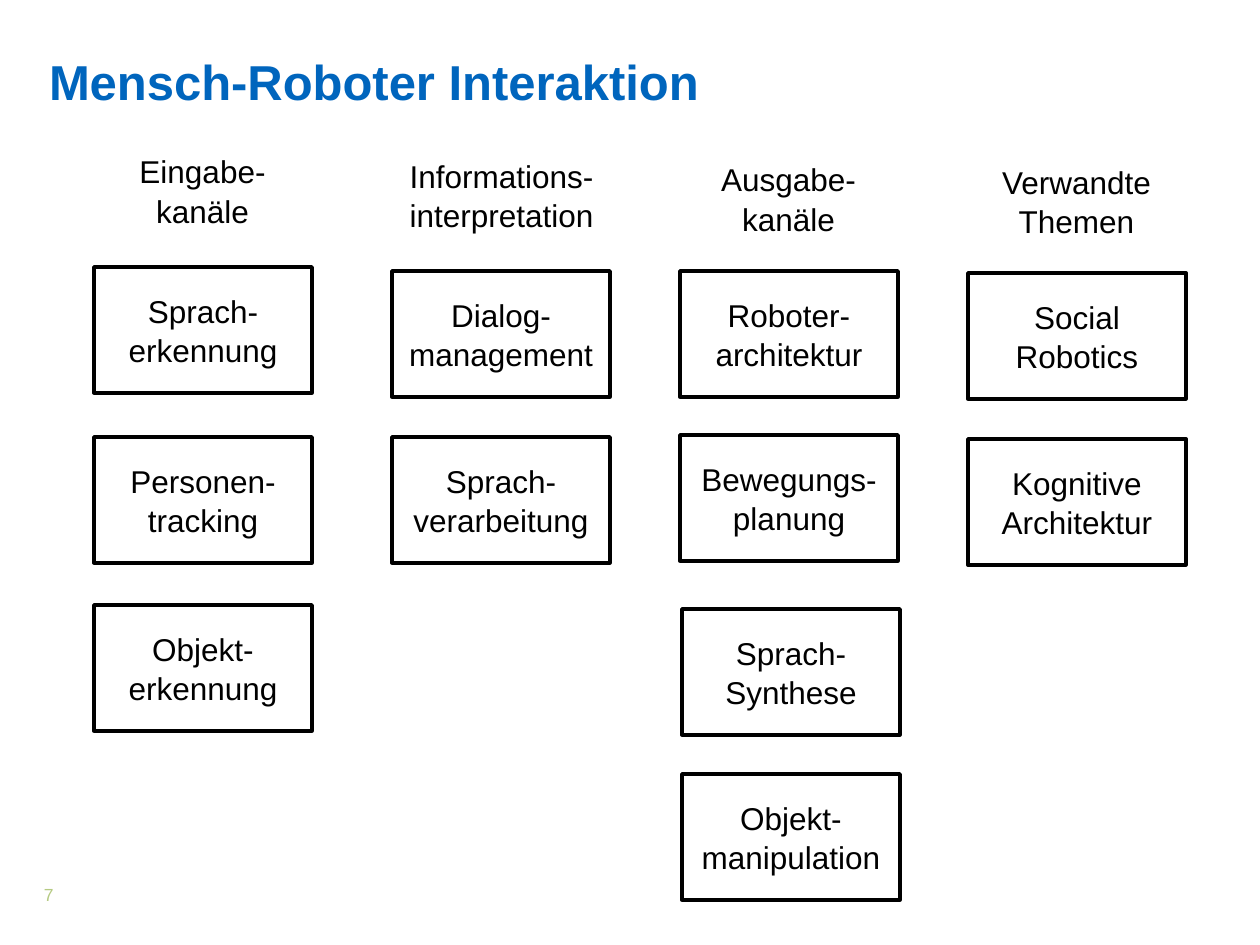
from dataclasses import dataclass

from pptx import Presentation
from pptx import util as u
from pptx.dml.color import RGBColor
from pptx.enum import shapes, text

SCALE = 914400 // 126


@dataclass(frozen=True)
class Theme:
    font: str = "Arial"
    blue: str = "0065BD"
    green: str = "B5CA82"
    black: str = "000000"
    white: str = "FFFFFF"
    title: int = 28
    body: int = 18
    small: int = 10
    line: int = 2


THEME = Theme()
PANEL_W = 297
BOX_W, BOX_H = 218, 126

# Panel left, top and height; heading; boxes as (left, top, words)
TOPICS = [
    (54, 145, 636, "Eingabe-\nkanäle", [
        (94, 267, "Sprach-\nerkennung"),
        (94, 437, "Personen-\ntracking"),
        (94, 605, "Objekt-\nerkennung")]),
    (353, 149, 636, "Informations-\ninterpretation", [
        (392, 271, "Dialog-\nmanagement"),
        (392, 437, "Sprach-verarbeitung")]),
    (928, 155, 636, "Verwandte\nThemen", [
        (968, 273, "Social\nRobotics"),
        (968, 439, "Kognitive\nArchitektur")]),
    (640, 153, 780, "Ausgabe-\nkanäle", [
        (680, 271, "Roboter-\narchitektur"),
        (680, 435, "Bewegungs-\nplanung"),
        (682, 609, "Sprach-\nSynthese"),
        (682, 774, "Objekt-\nmanipulation")]),
]


def px(*sizes):
    return [u.Emu(size * SCALE) for size in sizes]


def rgb(code):
    return RGBColor.from_string(code)


def write(shape, words, size=THEME.body, color=THEME.black, bold=False,
          align=text.PP_ALIGN.CENTER, anchor=text.MSO_ANCHOR.MIDDLE,
          inset=(13, 6), spacing=1.04):
    frame = shape.text_frame
    frame.word_wrap = True
    frame.auto_size = text.MSO_AUTO_SIZE.NONE
    frame.vertical_anchor = anchor
    frame.margin_left, frame.margin_top = px(*inset)
    frame.margin_right, frame.margin_bottom = px(*inset)
    frame.text = words
    for para in frame.paragraphs:
        para.alignment = align
        para.line_spacing = spacing
        font = para.font
        font.name, font.size, font.bold = THEME.font, u.Pt(size), bold
        font.color.rgb = rgb(color)


def add_rect(group, place, words, framed=True, **style):
    rect = group.shapes.add_shape(shapes.MSO_SHAPE.RECTANGLE, *px(*place))
    rect.shadow.inherit = False
    rect.fill.solid()
    rect.fill.fore_color.rgb = rgb(THEME.white)
    if framed:
        rect.line.color.rgb = rgb(THEME.black)
        rect.line.width = u.Pt(THEME.line)
    else:
        rect.line.fill.background()
    write(rect, words, **style)


def add_topic(slide, left, top, height, heading, boxes):
    """Group a heading panel with the boxes that stand on it."""
    group = slide.shapes.add_group_shape()
    add_rect(group, (left, top, PANEL_W, height), heading, framed=False,
             anchor=text.MSO_ANCHOR.TOP)
    for x, y, words in boxes:
        add_rect(group, (x, y, BOX_W, BOX_H), words)


def add_title(slide, words):
    title = slide.shapes.title
    title.left, title.top, title.width, title.height = px(49, 49, 1160, 123)
    write(title, words, size=THEME.title, color=THEME.blue, bold=True,
          align=text.PP_ALIGN.LEFT, anchor=text.MSO_ANCHOR.TOP,
          inset=(0, 0))


def add_number(slide, words):
    box = slide.shapes.add_textbox(*px(0, 845, 100, 100))
    write(box, words, size=THEME.small, color=THEME.green,
          align=text.PP_ALIGN.LEFT, inset=(44, 6), spacing=1)


def main():
    deck = Presentation()
    deck.slide_width, deck.slide_height = px(1260, 945)
    slide = deck.slides.add_slide(deck.slide_layouts[5])
    add_title(slide, "Mensch-Roboter Interaktion")
    add_number(slide, "7")
    for topic in TOPICS:
        add_topic(slide, *topic)
    deck.save("out.pptx")


if __name__ == "__main__":
    main()
